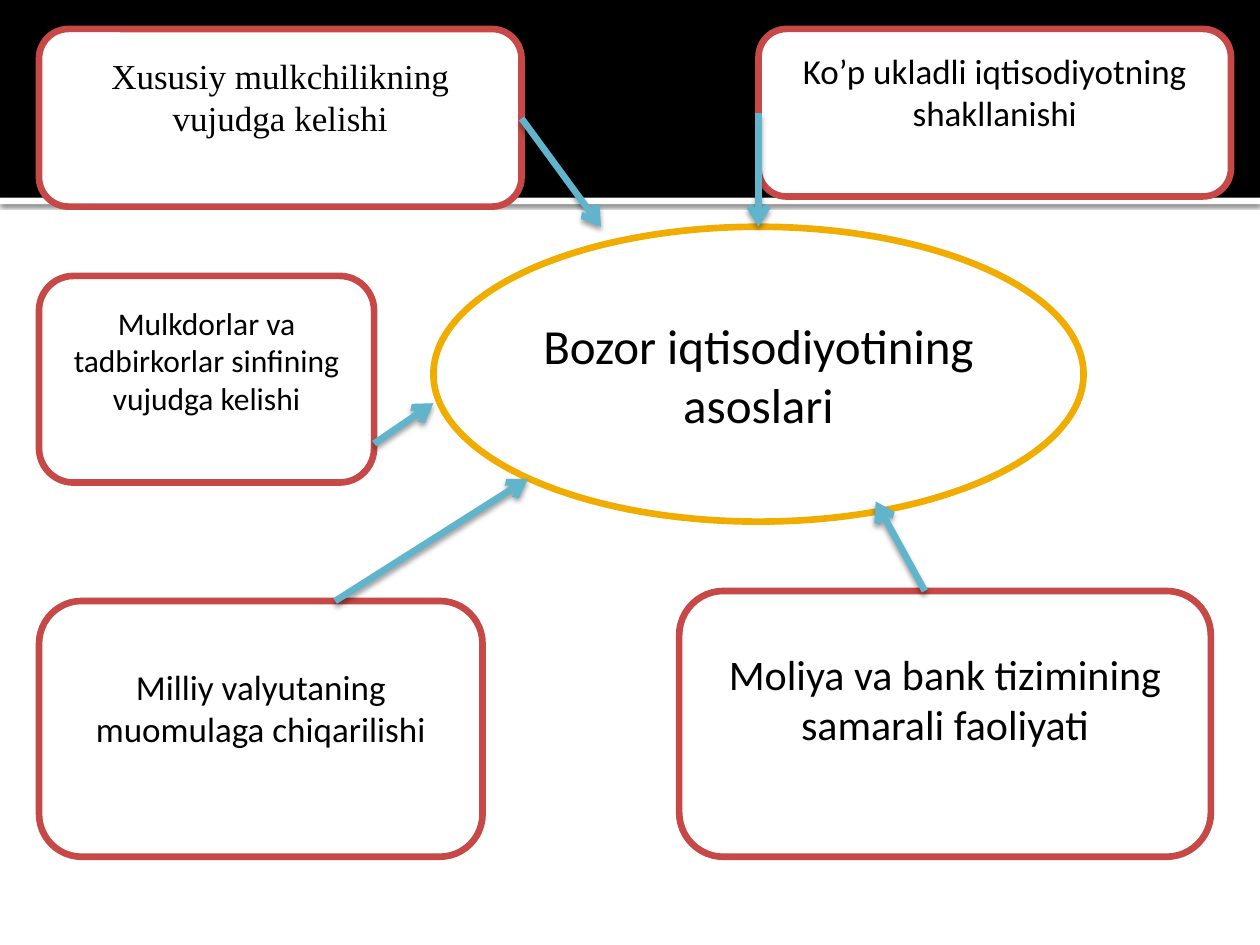
import pptx
import pptx.util
import pptx.dml.color
import pptx.enum.shapes
import pptx.enum.text
import pptx.oxml.ns
import lxml.etree

Inches, Pt = pptx.util.Inches, pptx.util.Pt
SHAPE = pptx.enum.shapes.MSO_SHAPE
qn = pptx.oxml.ns.qn

COLORS = {
    "white": "FFFFFF",
    "black": "000000",
    "cause": "C64847",
    "center": "F0AD00",
    "arrow": "60B5CC",
}


def rgb(name):
    return pptx.dml.color.RGBColor.from_string(COLORS[name])


class SlideBuilder:
    line_width = Pt(3.8)
    font = "Calibri"

    def __init__(self, slide):
        self.slide = slide

    def add_shadow(self, sp, opacity, blur, distance):
        """Give a shape or connector a black shadow falling straight down."""
        spPr = sp._element.spPr
        effects = spPr.find(qn("a:effectLst"))
        if effects is None:
            effects = lxml.etree.SubElement(spPr, qn("a:effectLst"))
        shadow = lxml.etree.SubElement(
            effects, qn("a:outerShdw"), blurRad=str(Pt(blur)),
            dist=str(Pt(distance)), dir="5400000", rotWithShape="0")
        color = lxml.etree.SubElement(shadow, qn("a:srgbClr"), val=COLORS["black"])
        lxml.etree.SubElement(color, qn("a:alpha"), val=str(opacity * 1000))

    def add_shape(self, kind, box, fill, line=None):
        sp = self.slide.shapes.add_shape(kind, *map(Inches, box))
        sp.shadow.inherit = False
        sp.fill.solid()
        sp.fill.fore_color.rgb = rgb(fill)
        if line:
            sp.line.color.rgb = rgb(line)
            sp.line.width = self.line_width
        else:
            sp.line.fill.background()
        return sp

    def add_label(self, kind, box, text, size, line, font=None, lift=0):
        """Add an outlined shape with centred text; lift is extra bottom inset in points."""
        sp = self.add_shape(kind, box, "white", line)
        tf = sp.text_frame
        tf.word_wrap = True
        tf.vertical_anchor = pptx.enum.text.MSO_ANCHOR.MIDDLE
        tf.margin_bottom = Inches(0.05) + Pt(lift)
        tf.text = text
        p = tf.paragraphs[0]
        p.alignment = pptx.enum.text.PP_ALIGN.CENTER
        r = p.runs[0]
        r.font.name = font or self.font
        r.font.size = Pt(size)
        r.font.color.rgb = rgb("black")

    def add_cause(self, box, text, size, font=None):
        """Add a rounded box whose text sits half a line above the middle."""
        self.add_label(SHAPE.ROUNDED_RECTANGLE, box, text, size, "cause", font,
                       lift=1.2 * size)

    def add_arrow(self, start, end):
        sp = self.slide.shapes.add_connector(
            pptx.enum.shapes.MSO_CONNECTOR.STRAIGHT, *map(Inches, start + end))
        sp.line.color.rgb = rgb("arrow")
        sp.line.width = self.line_width
        ln = sp._element.spPr.find(qn("a:ln"))
        lxml.etree.SubElement(ln, qn("a:tailEnd"), type="arrow")
        self.add_shadow(sp, 38, 3.1, 2)


def main():
    prs = pptx.Presentation()
    prs.slide_width, prs.slide_height = Inches(10), Inches(7.5)
    s = SlideBuilder(prs.slides.add_slide(prs.slide_layouts[6]))

    band_height = 1.57
    rule = s.add_shape(SHAPE.RECTANGLE, (0, band_height, 10, 0.05), "white")
    s.add_shadow(rule, 60, 2.5, 0.8)
    s.add_shape(SHAPE.RECTANGLE, (0, 0, 10, band_height), "black")

    left = 0.31
    s.add_cause((left, 0.23, 3.83, 1.41), "Xususiy mulkchilikning vujudga kelishi",
                20, "Times New Roman")
    s.add_cause((left, 4.77, 3.52, 2.03), "Milliy valyutaning muomulaga chiqarilishi", 20)
    s.add_cause((6.02, 0.23, 3.75, 1.33), "Ko’p ukladli iqtisodiyotning shakllanishi", 20)
    s.add_cause((left, 2.19, 2.66, 1.64),
                "Mulkdorlar va tadbirkorlar sinfining vujudga kelishi", 18)
    s.add_label(SHAPE.OVAL, (3.44, 1.8, 5.16, 2.34),
                "Bozor iqtisodiyotining asoslari", 28, "center")
    s.add_cause((5.39, 4.69, 4.22, 2.11), "Moliya va bank tizimining samarali faoliyati", 24)

    for start, end in [
        ((4.14, 0.94), (4.77, 1.8)),
        ((6.02, 0.9), (6.02, 1.8)),
        ((2.97, 3.52), (3.44, 3.2)),
        ((7.34, 4.69), (6.95, 3.98)),
        ((2.66, 4.77), (4.19, 3.8)),
    ]:
        s.add_arrow(start, end)

    prs.save("out.pptx")


if __name__ == "__main__":
    main()
